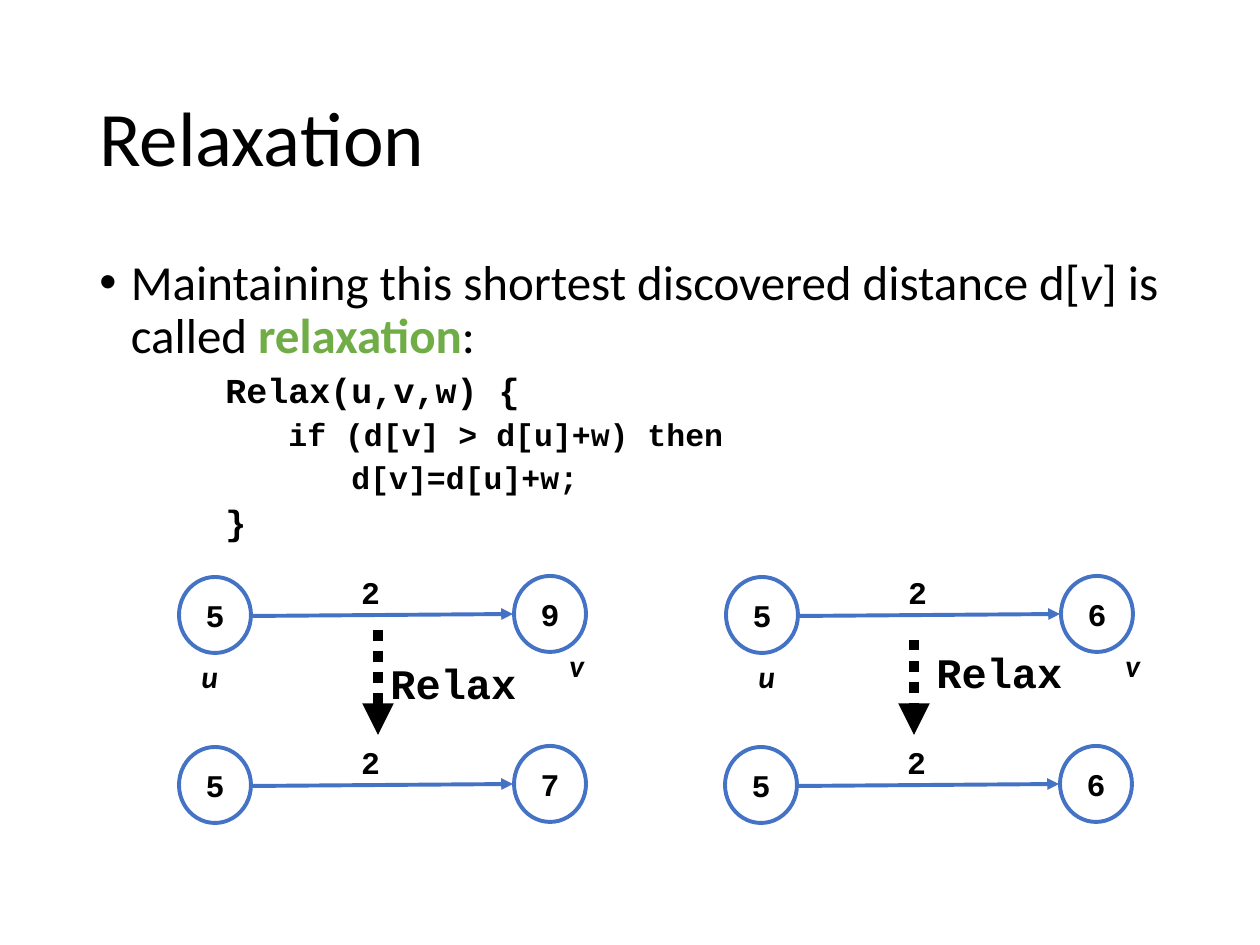
import pptx
import pptx.util
import pptx.dml.color
import pptx.enum.dml
import pptx.enum.shapes
import pptx.enum.text
import pptx.oxml

SCALE = 914400 / 126
HUES = {"ink": "000000", "paper": "FFFFFF", "blue": "4472C4", "green": "70AD47"}
SANS, MONO = "Calibri", "Courier New"
ALIGN = pptx.enum.text.PP_ALIGN
ANCHOR = pptx.enum.text.MSO_ANCHOR


def px(*sizes):
    return [pptx.util.Emu(round(size * SCALE)) for size in sizes]


def hue(name):
    return pptx.dml.color.RGBColor.from_string(HUES[name])


def add_xml(parent, tag, **attrs):
    node = pptx.oxml.parse_xml(
        f'<a:{tag} xmlns:a="http://schemas.openxmlformats.org/drawingml/2006/main"/>')
    for name, value in attrs.items():
        node.set(name, value)
    parent.append(node)


def style(par, size, face=MONO, bold=True, slant=False, align=None):
    font = par.font
    font.size, font.name = pptx.util.Pt(size), face
    font.bold, font.italic = bold, slant
    font.color.rgb = hue("ink")
    par.alignment = align


def add_label(slide, box, text, size, **look):
    frame = slide.shapes.add_textbox(*px(*box)).text_frame
    frame.word_wrap = False
    frame.text = text
    style(frame.paragraphs[0], size, **look)


def add_title(slide, box, text):
    frame = slide.shapes.add_textbox(*px(*box)).text_frame
    frame.word_wrap = True
    frame.vertical_anchor = ANCHOR.MIDDLE
    frame.text = text
    par = frame.paragraphs[0]
    style(par, 44, SANS, bold=False)
    par.line_spacing = 0.9


def add_body(slide, box):
    frame = slide.shapes.add_textbox(*px(*box)).text_frame
    frame.word_wrap = True

    def add_par(level, margin, gap):
        first = frame.paragraphs[0]
        par = frame.add_paragraph() if first.runs else first
        par.level, par.line_spacing = level, 0.9
        par.space_before = pptx.util.Pt(gap)
        props = par._p.get_or_add_pPr()
        props.set("marL", str(pptx.util.Inches(margin)))
        props.set("indent", str(pptx.util.Inches(-0.25)))
        return par

    lead = add_par(0, 0.25, 10)
    add_xml(lead._p.get_or_add_pPr(), "buFont", typeface="Arial")
    add_xml(lead._p.get_or_add_pPr(), "buChar", char="•")
    style(lead, 28, SANS, bold=False)
    for text in ("Maintaining this shortest discovered distance d[", "v",
                 "] is called ", "relaxation", ":"):
        run = lead.add_run()
        run.text = text
        if text == "v":
            run.font.italic = True
        elif text == "relaxation":
            run.font.bold = True
            run.font.color.rgb = hue("green")

    for level, size, text in ((2, 20, "Relax(u,v,w) {"),
                              (3, 18, "if (d[v] > d[u]+w) then"),
                              (4, 18, "d[v]=d[u]+w;"),
                              (2, 20, "}")):
        par = add_par(level, 0.25 + level / 2, 5)
        par.add_run().text = text
        style(par, size)


def add_arrow(slide, start, end, color, width, dash=None):
    arrow = slide.shapes.add_connector(
        pptx.enum.shapes.MSO_CONNECTOR.STRAIGHT, *px(*start, *end))
    line = arrow.line
    line.color.rgb = hue(color)
    line.width = pptx.util.Pt(width)
    if dash:
        line.dash_style = dash
    add_xml(line._get_or_add_ln(), "tailEnd", type="triangle")
    add_xml(arrow._element.spPr, "effectLst")


def add_node(slide, box, text):
    node = slide.shapes.add_shape(pptx.enum.shapes.MSO_SHAPE.OVAL, *px(*box))
    node.shadow.inherit = False
    node.fill.solid()
    node.fill.fore_color.rgb = hue("paper")
    node.line.color.rgb = hue("blue")
    node.line.width = pptx.util.Pt(2.25)
    frame = node.text_frame
    frame.word_wrap = False
    frame.vertical_anchor = ANCHOR.MIDDLE
    frame.text = text
    style(frame.paragraphs[0], 18, align=ALIGN.CENTER)


def add_edge(slide, left, top, near, far):
    """Two nodes joined by an arrow of weight 2."""
    add_node(slide, (left + 335, top, 72, 76), far)
    add_node(slide, (left, top + 1, 72, 76), near)
    add_arrow(slide, (left + 74, top + 40), (left + 334, top + 38), "blue", 2.25)
    add_label(slide, (left + 168, top - 9, 47, 54), "2", 18, align=ALIGN.CENTER)


def add_panel(slide, left, top, ends, shift, drop, word, names):
    """An edge before and after relaxing; offsets are from left and top."""
    add_edge(slide, left, top, "5", ends[0])
    add_edge(slide, left + shift, top + 170, "5", ends[1])
    x, y = left + drop[0], top + drop[1]
    add_arrow(slide, (x, y), (x, top + 159), "ink", 6,
              pptx.enum.dml.MSO_LINE.ROUND_DOT)
    add_label(slide, (left + word[0], top + word[1], 151, 63), "Relax", 24)
    for text, x, y in zip("uv", names, (75, 64)):
        add_label(slide, (left + x, top + y, 44, 50), text, 18,
                  face=SANS, slant=True)


def main():
    deck = pptx.Presentation()
    deck.slide_width, deck.slide_height = px(1260, 945)
    slide = deck.slides.add_slide(deck.slide_layouts[6])
    add_title(slide, (87, 50, 1086, 183), "Relaxation")
    add_body(slide, (87, 252, 1086, 600))
    add_panel(slide, 179, 576, "97", 0, (199, 54), (199, 75), (10, 378))
    add_panel(slide, 726, 576, "66", -1, (188, 64), (198, 64), (20, 387))
    deck.save("out.pptx")


if __name__ == "__main__":
    main()
